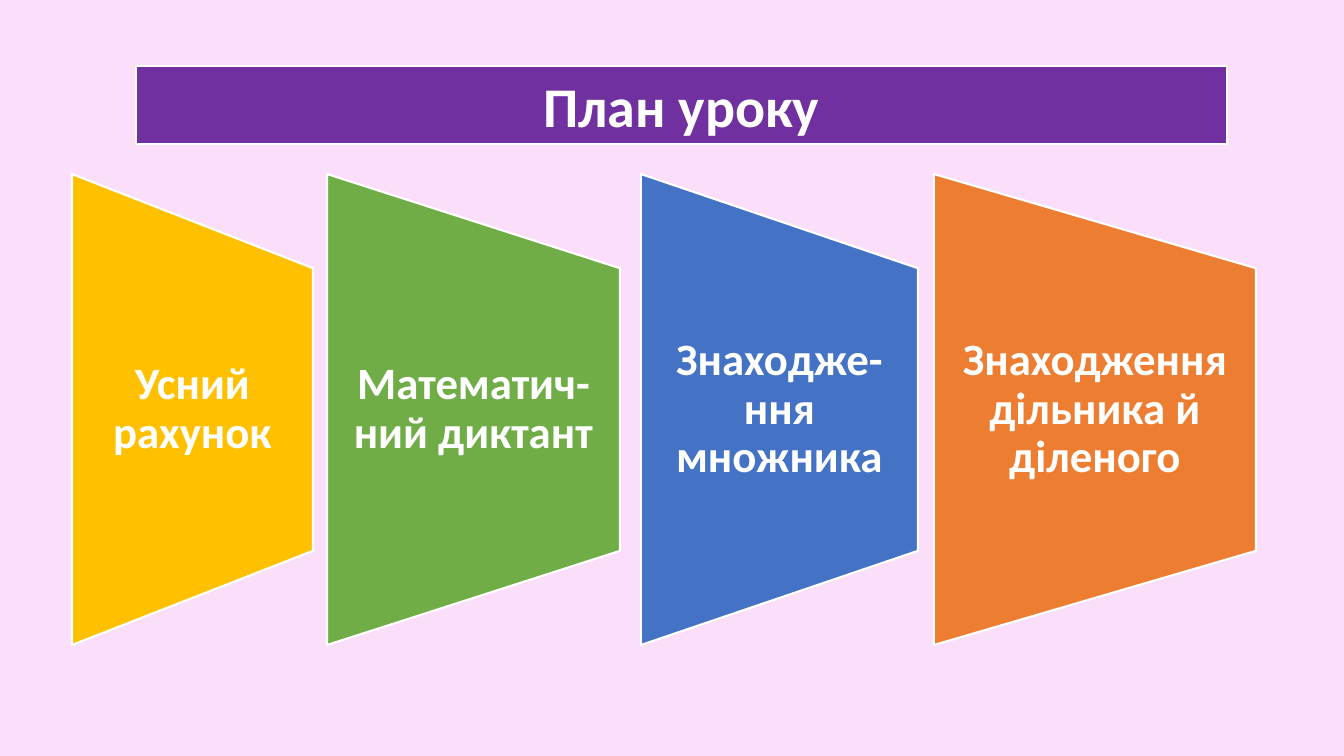
from pptx import Presentation
from pptx import util as u
from pptx.dml.color import RGBColor
from pptx.enum import shapes, text

PX = 914400 / 100.8


def px(*lengths):
    """Turn pixel lengths into EMU."""
    return [u.Emu(round(length * PX)) for length in lengths]


def paint(part, fill):
    """Solid fill with the white outline that every part shares."""
    part.fill.solid()
    part.fill.fore_color.rgb = RGBColor.from_string(fill)
    part.line.color.rgb = RGBColor.from_string("FFFFFF")
    part.line.width = u.Pt(1.5)


deck = Presentation()
deck.slide_width, deck.slide_height = px(1344, 756)
slide = deck.slides.add_slide(deck.slide_layouts[5])
slide.background.fill.solid()
slide.background.fill.fore_color.rgb = RGBColor.from_string("FADEFA")

heading = slide.shapes.title
heading.left, heading.top, heading.width, heading.height = px(136, 66, 1091, 78)
paint(heading, "7030A0")
heading.text_frame.text = "План уроку"
heading.text_frame.auto_size = text.MSO_AUTO_SIZE.NONE
labels = [(heading, 40)]

# Each stage narrows to the right: left edge, width, colour, wording
stages = [
    (72, 241, "FFC000", "Усний рахунок"),
    (327, 293, "70AD47", "Математич-ний диктант"),
    (641, 277, "4472C4", "Знаходже-ння множника"),
    (934, 322, "ED7D31", "Знаходження дільника й діленого"),
]
TOP, HEIGHT = 174, 471
for left, width, colour, wording in stages:
    # Turned by 270°, so its own width runs vertically around the same centre
    offset = (HEIGHT - width) / 2
    panel = slide.shapes.add_shape(
        shapes.MSO_SHAPE.FLOWCHART_MANUAL_OPERATION,
        *px(left - offset, TOP + offset, HEIGHT, width))
    panel.rotation = 270
    panel.shadow.inherit = False
    paint(panel, colour)

    label = slide.shapes.add_textbox(*px(left, TOP + HEIGHT / 5, width, HEIGHT * 3 / 5))
    frame = label.text_frame
    frame.word_wrap = True
    frame.vertical_anchor = text.MSO_ANCHOR.MIDDLE
    frame.margin_left, frame.margin_right = px(22, 22)
    frame.margin_top = frame.margin_bottom = 0
    frame.text = wording
    frame.paragraphs[0].line_spacing = 0.9
    labels.append((label, 32))

for label, size in labels:
    paragraph = label.text_frame.paragraphs[0]
    paragraph.alignment = text.PP_ALIGN.CENTER
    paragraph.font.name = "Calibri"
    paragraph.font.size = u.Pt(size)
    paragraph.font.bold = True
    paragraph.font.color.rgb = RGBColor.from_string("FFFFFF")

deck.save("out.pptx")
